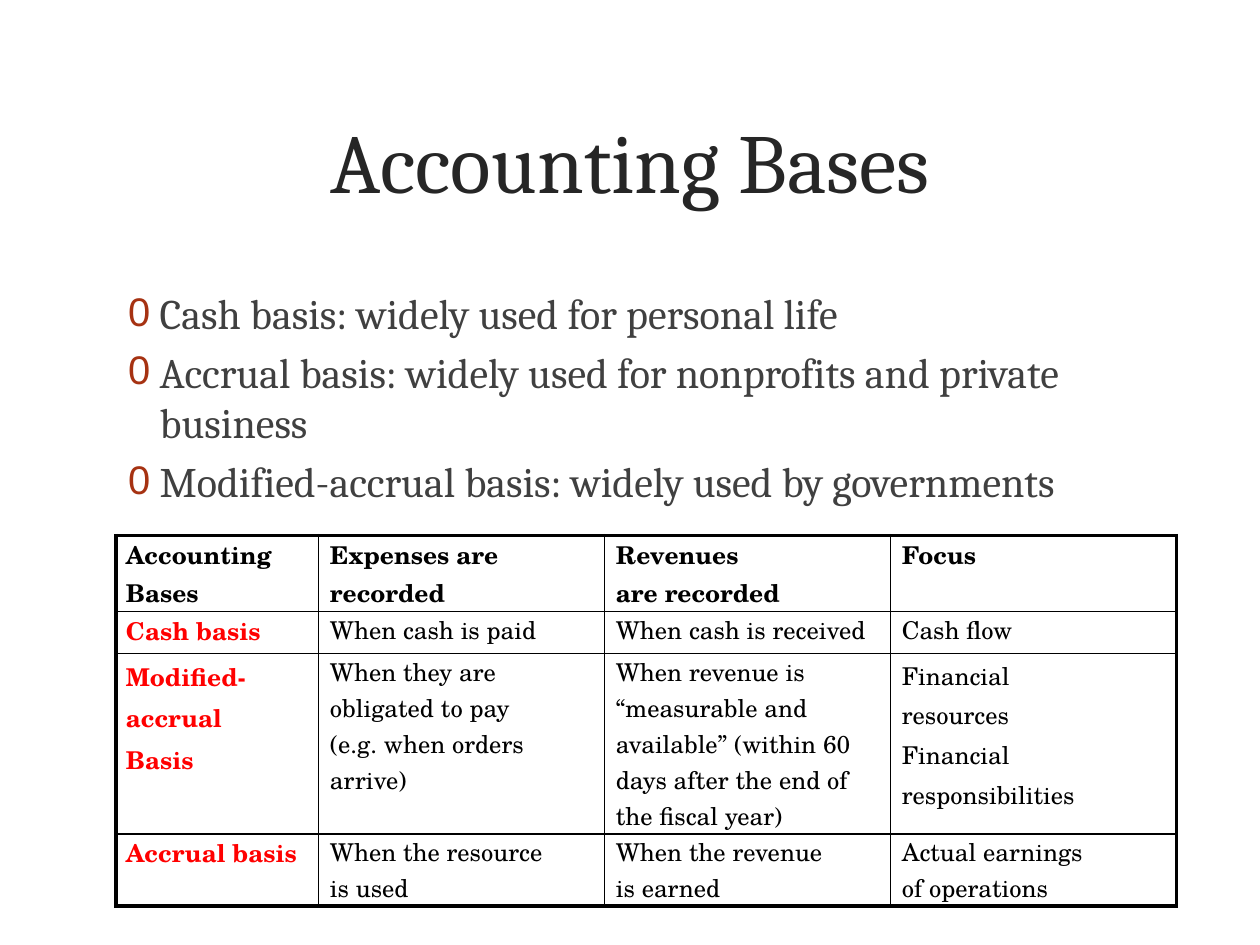
from lxml import etree
from pptx import Presentation
from pptx.dml.color import RGBColor
from pptx.enum.text import MSO_ANCHOR, PP_ALIGN
from pptx.oxml.ns import qn
from pptx.util import Pt

CENTER = PP_ALIGN.CENTER
MIDDLE, TOP = MSO_ANCHOR.MIDDLE, MSO_ANCHOR.TOP

TITLE = "Accounting Bases"
BULLETS = [
    "Cash basis: widely used for personal life",
    "Accrual basis: widely used for nonprofits and private business",
    "Modified-accrual basis: widely used by governments",
]
ROWS = [
    ["Accounting Bases", "Expenses are recorded", "Revenues are recorded", "Focus"],
    ["Cash basis", "When cash is paid", "When cash is received", "Cash flow"],
    ["Modified- accrual Basis",
     "When they are obligated to pay (e.g. when orders arrive)",
     "When revenue is “measurable and available” (within 60 days after the end of the fiscal year)",
     "Financial resources Financial responsibilities"],
    ["Accrual basis", "When the resource is used", "When the revenue is earned",
     "Actual earnings of operations"],
]
COL_WIDTHS = [115.9, 163.4, 163.4, 163.4]
ROW_HEIGHTS = [43.5, 24, 103, 41.3]
RIGHT_INSETS = [
    [0, 0, 61, 0],
    [0, 0, 0, 0],
    [27, 32, 10, 46],
    [0, 32, 32, 46],
]
LOOSE_CELLS = {(2, 0), (2, 3)}

THEME = {
    "title": {"name": "Cambria", "size": Pt(48), "color": "262626"},
    "body": {"name": "Cambria", "size": Pt(24), "color": "404040"},
    "head": {"name": "TeX Gyre Schola", "size": Pt(14), "bold": True, "color": "000000"},
    "label": {"name": "TeX Gyre Schola", "size": Pt(14), "bold": True, "color": "FF0000"},
    "cell": {"name": "TeX Gyre Schola", "size": Pt(14), "bold": False, "color": "000000"},
    "bullet": "A63212",
    "border": "000000",
    "outer": 2.25,
    "inner": 1,
}


def set_attrs(obj, **values):
    for name, value in values.items():
        setattr(obj, name, value)


def write(p, text, style):
    r = p.add_run()
    r.text = text
    for name, value in THEME[style].items():
        if name == "color":
            r.font.color.rgb = RGBColor.from_string(value)
        else:
            setattr(r.font, name, value)


def add_box(s, left, top, width, height, anchor):
    tf = s.shapes.add_textbox(Pt(left), Pt(top), Pt(width), Pt(height)).text_frame
    set_attrs(tf, word_wrap=True, vertical_anchor=anchor)
    return tf


def add_bullet(p):
    pPr = p._p.get_or_add_pPr()
    pPr.set("marL", str(Pt(18)))
    pPr.set("indent", str(-Pt(18)))
    color = etree.SubElement(pPr, qn("a:buClr"))
    etree.SubElement(color, qn("a:srgbClr"), val=THEME["bullet"])
    etree.SubElement(pPr, qn("a:buSzPct"), val="95000")
    etree.SubElement(pPr, qn("a:buFont"), typeface="Arial")
    etree.SubElement(pPr, qn("a:buChar"), char="0")


def set_borders(cell, outer_sides):
    tcPr = cell._tc.get_or_add_tcPr()
    for i, side in enumerate("LRTB"):
        width = THEME["outer" if outer_sides[side] else "inner"]
        ln = etree.Element(qn(f"a:ln{side}"), w=str(Pt(width)))
        fill = etree.SubElement(ln, qn("a:solidFill"))
        etree.SubElement(fill, qn("a:srgbClr"), val=THEME["border"])
        tcPr.insert(i, ln)


def add_basis_table(s):
    n_rows, n_cols = len(ROWS), len(COL_WIDTHS)
    table = s.shapes.add_table(n_rows, n_cols, Pt(66.2), Pt(306),
                               Pt(sum(COL_WIDTHS)), Pt(sum(ROW_HEIGHTS))).table
    set_attrs(table, first_row=False, horz_banding=False)
    for column, width in zip(table.columns, COL_WIDTHS):
        column.width = Pt(width)
    for row, height in zip(table.rows, ROW_HEIGHTS):
        row.height = Pt(height)
    for i, texts in enumerate(ROWS):
        for j, text in enumerate(texts):
            cell = table.cell(i, j)
            set_attrs(cell, margin_left=Pt(6.5 if j else 5.8), margin_top=0,
                      margin_right=Pt(RIGHT_INSETS[i][j]), margin_bottom=0)
            cell.fill.background()
            set_borders(cell, {"L": j == 0, "R": j == n_cols - 1,
                               "T": i == 0, "B": i == n_rows - 1})
            p = cell.text_frame.paragraphs[0]
            if (i, j) in LOOSE_CELLS:
                p.line_spacing = 1.1
            write(p, text, "head" if i == 0 else "cell" if j else "label")


def main():
    prs = Presentation()
    set_attrs(prs, slide_width=Pt(720), slide_height=Pt(540))
    s = prs.slides.add_slide(prs.slide_layouts[6])

    p = add_box(s, 43.6, 34.6, 632.9, 113.8, MIDDLE).paragraphs[0]
    p.alignment = CENTER
    write(p, TITLE, "title")

    tf = add_box(s, 66.2, 160.6, 588.2, 311, TOP)
    for i, text in enumerate(BULLETS):
        p = tf.add_paragraph() if i else tf.paragraphs[0]
        if i:
            p.space_before = Pt(4.8)
        add_bullet(p)
        write(p, text, "body")

    add_basis_table(s)
    prs.save("out.pptx")


if __name__ == "__main__":
    main()
